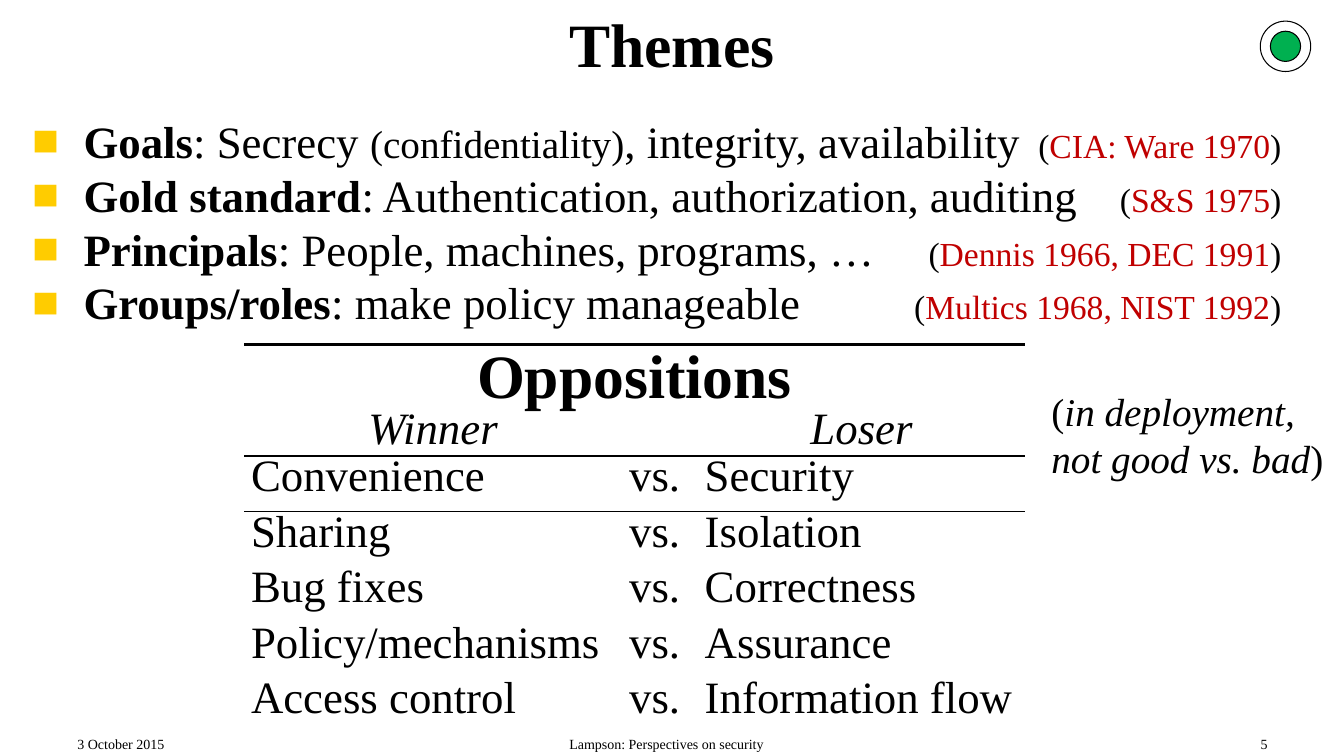
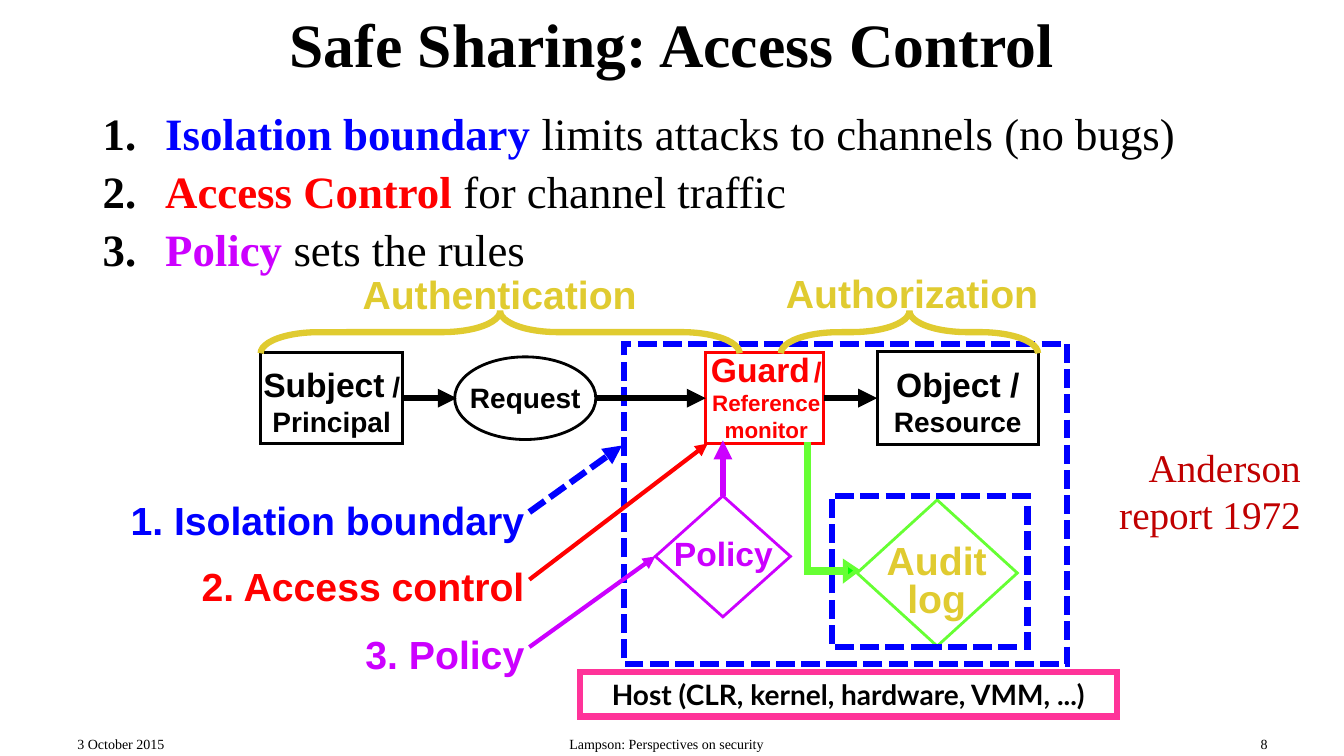
"""Builds two slides on security themes and access control."""
from dataclasses import dataclass, field

from lxml import etree
from pptx import Presentation
from pptx.dml.color import RGBColor
from pptx.enum.dml import MSO_LINE
from pptx.enum.shapes import MSO_CONNECTOR, MSO_SHAPE as SHAPE
from pptx.enum.text import MSO_ANCHOR as ANCHOR, MSO_AUTO_SIZE, PP_ALIGN as ALIGN
from pptx.oxml.ns import qn
from pptx.util import Inches, Pt

COLORS = {
    "black": "000000", "dark_red": "C00000", "bullet": "FFCC00", "green": "00B050",
    "blue": "0000FF", "red": "FF0000", "purple": "CC00FF", "gold": "E0CB30",
    "lime": "66FF33", "bright_green": "00FF00", "pink": "FF3399",
}
SERIF, SANS = "Times New Roman", "Arial"
NO_STYLE = "{2D5ABB26-0587-4C30-8999-92F81FD0307C}"
FOOTER_TOP, FOOTER_HEIGHT = 7.25, 0.25

Box = tuple[float, float, float, float]
Point = tuple[float, float]


@dataclass
class Run:
    text: str
    fmt: dict = field(default_factory=dict)


@dataclass
class Label:
    at: Box
    paragraphs: list[list[Run]]
    fmt: dict
    align: ALIGN = ALIGN.CENTER
    inset: bool = False
    spacing: float | None = None


@dataclass
class Outline:
    kind: SHAPE
    at: Box
    color: str
    width: float = 2
    fill: str | None = None
    dashed: bool = False
    rotation: float = 0
    adjust: tuple[float, ...] = ()


@dataclass
class Arrow:
    start: Point
    end: Point
    color: str = "black"
    width: float = 4.5
    dashed: bool = False
    begin: tuple[str, int] | None = None
    finish: tuple[str, int] | None = None


def rgb(name: str) -> RGBColor:
    return RGBColor.from_string(COLORS[name])


def add_run(p, run: Run, base: dict) -> None:
    r = p.add_run()
    r.text = run.text
    fmt = {"name": SERIF, "color": "black", "bold": False, "italic": False} | base | run.fmt
    r.font.color.rgb = rgb(fmt.pop("color"))
    fmt["size"] = Pt(fmt["size"])
    for key, value in fmt.items():
        setattr(r.font, key, value)


def fill_text(tf, paragraphs: list[list[Run]], base: dict, **settings) -> None:
    for i, runs in enumerate(paragraphs):
        p = tf.paragraphs[0] if i == 0 else tf.add_paragraph()
        for key, value in settings.items():
            setattr(p, key, value)
        for run in runs:
            add_run(p, run, base)


def set_margins(target, x: float, y: float) -> None:
    for side, value in {"left": x, "right": x, "top": y, "bottom": y}.items():
        setattr(target, f"margin_{side}", Inches(value))


def add_label(s, label: Label):
    box = s.shapes.add_textbox(*map(Inches, label.at))
    tf = box.text_frame
    tf.word_wrap = True
    if not label.inset:
        set_margins(tf, 0, 0)
    fill_text(tf, label.paragraphs, label.fmt, alignment=label.align, line_spacing=label.spacing)
    return box


def style_line(line, color: str, width: float, dashed: bool = False) -> None:
    line.color.rgb = rgb(color)
    line.width = Pt(width)
    if dashed:
        line.dash_style = MSO_LINE.SQUARE_DOT
    etree.SubElement(line._get_or_add_ln(), qn("a:miter"), lim="800000")


def style_shape(sp, color: str, width: float, fill: str | None, dashed: bool = False) -> None:
    sp.shadow.inherit = False
    if fill:
        sp.fill.solid()
        sp.fill.fore_color.rgb = rgb(fill)
    else:
        sp.fill.background()
    style_line(sp.line, color, width, dashed)


def add_outline(s, o: Outline):
    sp = s.shapes.add_shape(o.kind, *map(Inches, o.at))
    style_shape(sp, o.color, o.width, o.fill, o.dashed)
    sp.rotation = o.rotation
    for i, value in enumerate(o.adjust):
        sp.adjustments[i] = value
    return sp


def add_arrow(s, a: Arrow, nodes: dict) -> None:
    c = s.shapes.add_connector(MSO_CONNECTOR.STRAIGHT, *map(Inches, a.start + a.end))
    if a.begin:
        c.begin_connect(nodes[a.begin[0]], a.begin[1])
    if a.finish:
        c.end_connect(nodes[a.finish[0]], a.finish[1])
    style_line(c.line, a.color, a.width, a.dashed)
    etree.SubElement(c.line._get_or_add_ln(), qn("a:tailEnd"), type="triangle")
    etree.SubElement(c._element.spPr, qn("a:effectLst"))


def add_list(s, at: Box, rows: list[list[Run]], indent: float, bullet: tuple[str, dict],
             color: str, gap: float, tab: float | None = None) -> None:
    tf = add_label(s, Label(at, rows, {"size": 32}, ALIGN.LEFT, True)).text_frame
    for i, p in enumerate(tf.paragraphs):
        pPr = p._p.get_or_add_pPr()
        pPr.set("marL", str(Inches(indent)))
        pPr.set("indent", str(-Inches(indent)))
        clr = etree.SubElement(pPr, qn("a:buClr"))
        etree.SubElement(clr, qn("a:srgbClr"), val=COLORS[color])
        etree.SubElement(pPr, qn("a:buFont"), typeface=SERIF)
        etree.SubElement(pPr, qn(bullet[0]), bullet[1])
        if tab:
            tabs = etree.SubElement(pPr, qn("a:tabLst"))
            etree.SubElement(tabs, qn("a:tab"), pos=str(Inches(tab)), algn="r")
        if i:
            p.space_before = Pt(gap)


def add_slide(prs, title: str, number: int):
    s = prs.slides.add_slide(prs.slide_layouts[5])
    sp = s.shapes.title
    for key, value in zip(("left", "top", "width", "height"), (0, 0.17, 13.33, 0.67)):
        setattr(sp, key, Inches(value))
    tf = sp.text_frame
    tf.auto_size = MSO_AUTO_SIZE.NONE
    tf.vertical_anchor = ANCHOR.BOTTOM
    fill_text(tf, [[Run(title)]], {"size": 44, "bold": True}, alignment=ALIGN.CENTER)
    for left, width, text, align in (
        (0.67, 2.44, "3 October 2015", ALIGN.LEFT),
        (4, 5.22, "Lampson: Perspectives on security", ALIGN.CENTER),
        (9.89, 2.78, str(number), ALIGN.RIGHT),
    ):
        at = (left, FOOTER_TOP, width, FOOTER_HEIGHT)
        add_label(s, Label(at, [[Run(text)]], {"size": 10}, align, True))
    return s


def style_cell(cell, text: str, fmt: dict, align: ALIGN, spacing: float,
               borders: dict[str, float]) -> None:
    set_margins(cell, 0.07, 0)
    tcPr = cell._tc.get_or_add_tcPr()
    for side, width in borders.items():
        ln = etree.SubElement(tcPr, qn(f"a:ln{side}"), w=str(Pt(width)))
        paint = etree.SubElement(ln, qn("a:solidFill"))
        etree.SubElement(paint, qn("a:srgbClr"), val=COLORS["black"])
    cell.fill.background()
    if text:
        fill_text(cell.text_frame, [[Run(text)]], fmt, alignment=align, line_spacing=spacing)


def add_oppositions(s) -> None:
    pairs = [
        ("Convenience", "Security"), ("Sharing", "Isolation"), ("Bug fixes", "Correctness"),
        ("Policy/mechanisms", "Assurance"), ("Access control", "Information flow"),
    ]
    rows = [("Oppositions", "", ""), ("Winner", "", "Loser")]
    rows += [(winner, "vs.", loser) for winner, loser in pairs]
    heights = [0.65, 0.45] + [0.55] * len(pairs)
    frame = s.shapes.add_table(len(rows), 3, *map(Inches, (2.42, 3.42, 7.75, sum(heights))))
    table = frame.table
    table.first_row = table.horz_banding = False
    table._tbl.tblPr.find(qn("a:tableStyleId")).text = NO_STYLE
    for column, width in zip(table.columns, (3.75, 0.75, 3.25)):
        column.width = Inches(width)
    formats = {0: {"size": 44, "bold": True}, 1: {"size": 32, "italic": True}}
    borders = {0: {"T": 2.25}, 1: {"B": 1}, 2: {"T": 1}}
    for i, (row, height) in enumerate(zip(rows, heights)):
        table.rows[i].height = Inches(height)
        align, spacing = (ALIGN.CENTER, 0.85) if i < 2 else (ALIGN.JUSTIFY, 0.9)
        for j, text in enumerate(row):
            style_cell(table.cell(i, j), text, formats.get(i, {"size": 32}), align, spacing,
                       borders.get(i, {}))
    table.cell(0, 0).merge(table.cell(0, 2))
    table.cell(0, 0).vertical_anchor = ANCHOR.BOTTOM


def build_themes(prs) -> None:
    s = add_slide(prs, "Themes", 5)
    themes = [
        ("Goals", [Run(": Secrecy "), Run("(confidentiality)", {"size": 28}),
                   Run(", integrity, availability\t")], "CIA: Ware 1970"),
        ("Gold standard", [Run(": Authentication, authorization, auditing\t")], "S&S 1975"),
        ("Principals", [Run(": People, machines, programs, …\t")], "Dennis 1966, DEC 1991"),
        ("Groups/roles", [Run(": make policy manageable\t")], "Multics 1968, NIST 1992"),
    ]
    small = {"size": 24}
    rows = [[Run(name, {"bold": True}), *body, Run("(", small),
             Run(source, small | {"color": "dark_red"}), Run(")", small)]
            for name, body, source in themes]
    add_list(s, (0.22, 1.08, 13.11, 2.25), rows, 0.51, ("a:buChar", {"char": "■"}),
             "bullet", 0, 12.39)
    add_oppositions(s)
    note = [Run("("), Run("in deployment, not good vs. bad", {"italic": True}), Run(")")]
    add_label(s, Label((10.33, 3.79, 3, 1.04), [note], {"size": 28}, ALIGN.LEFT, True))
    add_outline(s, Outline(SHAPE.OVAL, (12.5, 0.21, 0.5, 0.5), "black", 0.75))
    add_outline(s, Outline(SHAPE.OVAL, (12.6, 0.31, 0.3, 0.3), "black", 0.75, "green"))


def add_audit_arrow(s) -> None:
    shaft = [(8.39, 5.68), (8, 5.68), (8, 4.41), (8.02, 4.41), (8.02, 5.65), (8.39, 5.65)]
    head = [(8.38, 5.58), (8.5, 5.66), (8.38, 5.75)]
    fb = s.shapes.build_freeform(*map(Inches, shaft[0]), scale=1.0)
    fb.add_line_segments([tuple(map(Inches, pt)) for pt in shaft[1:]], close=True)
    fb.move_to(*map(Inches, head[0]))
    fb.add_line_segments([tuple(map(Inches, pt)) for pt in head[1:]], close=True)
    style_shape(fb.convert_to_shape(), "lime", 3, "bright_green")


def build_access_control(prs) -> None:
    s = add_slide(prs, "Safe Sharing: Access Control", 8)
    points = [
        ("Isolation boundary ", "blue", "limits attacks to channels (no bugs)"),
        ("Access Control ", "red", "for channel traffic"),
        ("Policy ", "purple", "sets the rules"),
    ]
    rows = [[Run(name, {"bold": True, "color": color}), Run(rest)] for name, color, rest in points]
    add_list(s, (0.92, 1, 11.42, 1.75), rows, 0.62,
             ("a:buAutoNum", {"type": "arabicPeriod"}), "black", 3)

    outlines = {
        "object": Outline(SHAPE.RECTANGLE, (8.7, 3.49, 1.6, 0.92), "black"),
        "guard": Outline(SHAPE.RECTANGLE, (7, 3.5, 1.17, 0.9), "red"),
        "request": Outline(SHAPE.OVAL, (4.51, 3.54, 1.4, 0.82), "black"),
        "subject": Outline(SHAPE.RECTANGLE, (2.58, 3.5, 1.41, 0.9), "black"),
        "audit": Outline(SHAPE.DIAMOND, (8.5, 4.96, 1.59, 1.45), "lime"),
        "audit_boundary": Outline(SHAPE.RECTANGLE, (8.25, 4.92, 1.94, 1.5), "blue", 4.5, dashed=True),
        "boundary": Outline(SHAPE.RECTANGLE, (6.19, 3.41, 4.39, 3.18), "blue", 4.5, dashed=True),
        "policy": Outline(SHAPE.DIAMOND, (6.5, 4.92, 1.34, 1.2), "purple"),
    }
    nodes = {name: add_outline(s, o) for name, o in outlines.items()}
    add_audit_arrow(s)

    def sans(size: int, color: str = "black") -> dict:
        return {"size": size, "name": SANS, "bold": True, "color": color}

    twenty = {"size": 20}
    guard = [Run("Guard"), Run(" ", {"size": 10}), Run("/", twenty)]
    for label in (
        Label((8.7, 3.61, 1.6, 0.74), [[Run("Object /")], [Run("Resource", twenty)]], sans(24)),
        Label((7.02, 3.46, 1.16, 0.94), [guard, [Run("Reference monitor", {"size": 16})]],
              sans(24, "red")),
        Label((4.5, 3.78, 1.42, 0.34), [[Run("Request")]], sans(20)),
        Label((2.58, 3.61, 1.42, 0.74), [[Run("Subject"), Run(" / Principal", twenty)]], sans(24)),
        Label((7.67, 2.67, 2.75, 0.47), [[Run("Authorization")]], sans(28, "gold")),
        Label((2.58, 2.68, 4.75, 0.47), [[Run("Authentication")]], sans(28, "gold")),
        Label((8.58, 5.41, 1.42, 0.75), [[Run("Audit log")]], sans(28, "gold"), spacing=0.8),
        Label((6.44, 5.29, 1.47, 0.4), [[Run("Policy")]], sans(24, "purple")),
        Label((1.28, 4.92, 3.92, 0.47), [[Run("1. Isolation boundary")]], sans(28, "blue"), ALIGN.RIGHT),
        Label((1.28, 5.58, 3.92, 0.47), [[Run("2. Access control")]], sans(28, "red"), ALIGN.RIGHT),
        Label((1.28, 6.25, 3.92, 0.47), [[Run("3. Policy")]], sans(28, "purple"), ALIGN.RIGHT),
        Label((10.96, 4.35, 2.04, 1.04), [[Run("Anderson report 1972")]],
              {"size": 28, "color": "dark_red"}, ALIGN.RIGHT, True),
    ):
        add_label(s, label)

    for arrow in (
        Arrow((4, 3.95), (4.53, 3.95), begin=("subject", 3)),
        Arrow((5.92, 3.95), (7, 3.95), finish=("guard", 1)),
        Arrow((8.17, 3.95), (8.7, 3.95), begin=("guard", 3), finish=("object", 1)),
        Arrow((5.25, 5.08), (6.17, 4.42), "blue", dashed=True),
        Arrow((5.25, 5.75), (7.02, 4.4), "red", 3),
        Arrow((7.17, 4.92), (7.17, 4.37), "purple", begin=("policy", 0)),
        Arrow((5.25, 6.42), (6.5, 5.52), "purple", 3, finish=("policy", 1)),
    ):
        add_arrow(s, arrow, nodes)
    for at in ((4.75, 0.92, 0.42, 4.75), (8.81, 2.02, 0.42, 2.55)):
        add_outline(s, Outline(SHAPE.LEFT_BRACE, at, "gold", 4.5, rotation=90, adjust=(1.37, 0.5)))
    host = add_outline(s, Outline(SHAPE.RECTANGLE, (5.75, 6.67, 5.33, 0.44), "pink", 4.5))
    fill_text(host.text_frame, [[Run("Host (CLR, kernel, hardware, VMM, ...)")]],
              {"size": 20, "name": "Lato", "bold": True}, alignment=ALIGN.CENTER)


def main() -> None:
    prs = Presentation()
    prs.slide_width, prs.slide_height = Inches(13.33), Inches(7.5)
    build_themes(prs)
    build_access_control(prs)
    prs.save("out.pptx")


if __name__ == "__main__":
    main()
